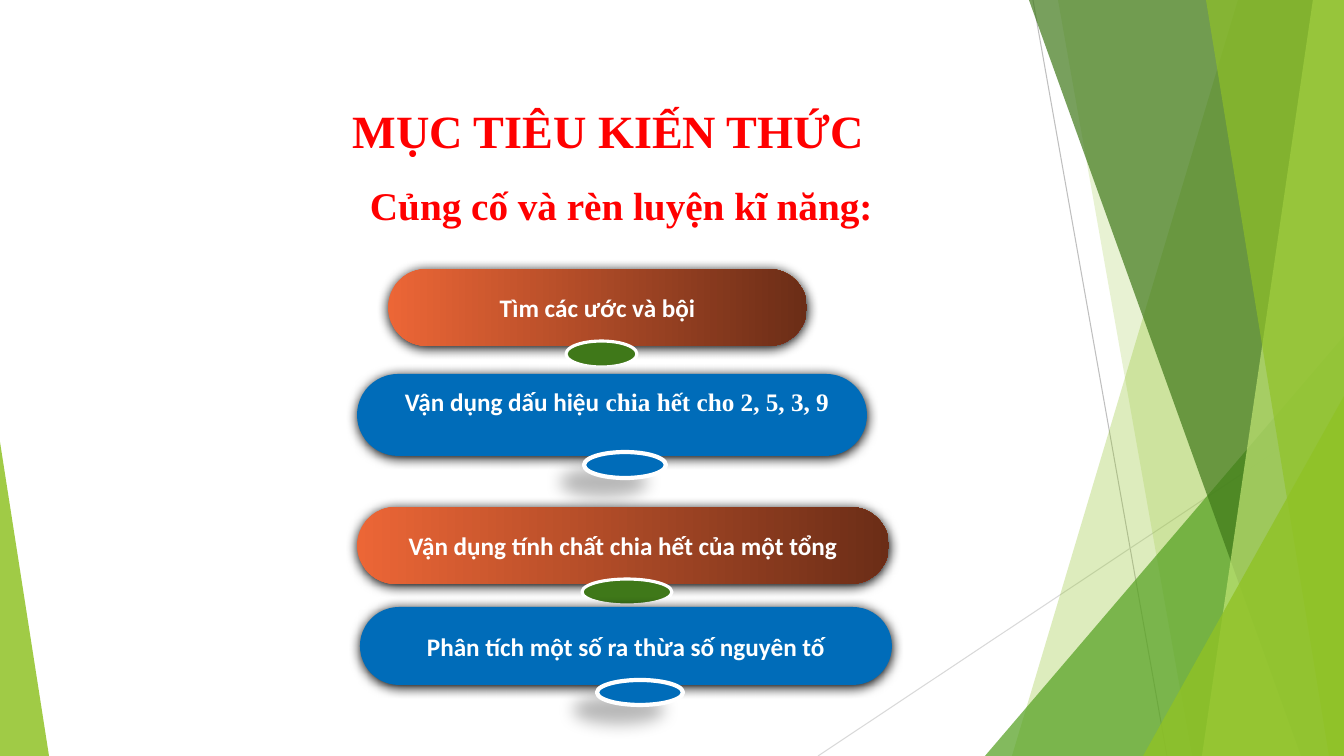
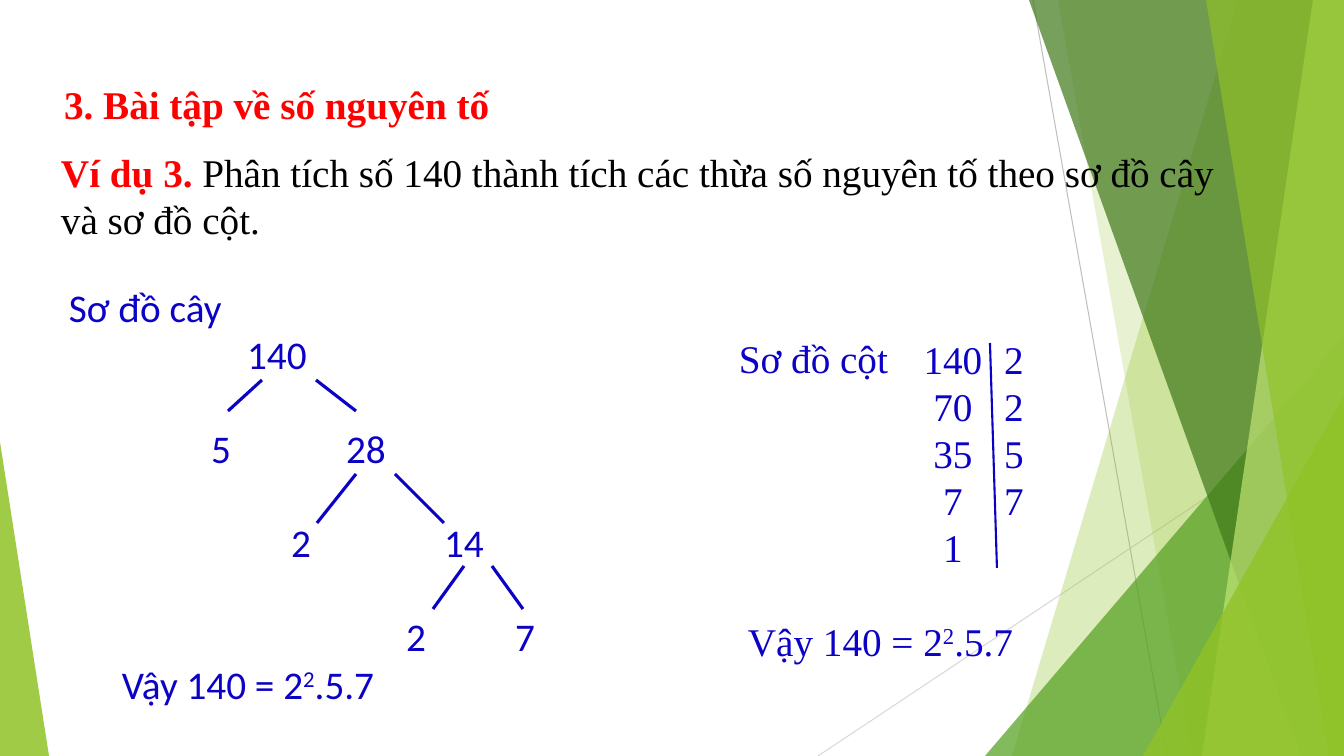
from lxml import etree
from pptx import Presentation
from pptx.dml.color import RGBColor
from pptx.enum.shapes import MSO_CONNECTOR, MSO_SHAPE
from pptx.enum.text import MSO_ANCHOR, PP_ALIGN
from pptx.oxml.ns import qn
from pptx.util import Emu, Pt

LEFT, MID = PP_ALIGN.LEFT, PP_ALIGN.CENTER
CENTER = MSO_ANCHOR.MIDDLE
PILL, OVAL, TRI = MSO_SHAPE.ROUNDED_RECTANGLE, MSO_SHAPE.OVAL, MSO_SHAPE.ISOSCELES_TRIANGLE
STRAIGHT = MSO_CONNECTOR.STRAIGHT

SCALE = 914400 / 100.8
WIDE, HIGH = 1344, 756
SERIF, SANS = "Times New Roman", "Calibri"

HEX = {
    "red": "FF0000", "ink": "0B02C6", "black": "000000", "white": "FFFFFF",
    "blue": "006CB9", "orange": "EC6636", "brown": "6B2D17", "forest": "3F7819",
    "green": "54A021", "lime": "90C226", "pale": "C0E474",
    "gray": "BFBFBF", "silver": "D9D9D9",
}

# Text styles: colour and font values
STYLES = {
    "title": ("red", {"name": SERIF, "size": Pt(33), "bold": True}),
    "head": ("red", {"name": SERIF, "size": Pt(28), "bold": True}),
    "body": ("black", {"name": SERIF, "size": Pt(28), "bold": False}),
    "tree": ("ink", {"name": SANS, "size": Pt(28), "bold": False}),
    "column": ("ink", {"name": SERIF, "size": Pt(28), "bold": False}),
    "pill": ("white", {"name": SANS, "size": Pt(18), "bold": True}),
    "serif": ("white", {"name": SERIF, "size": Pt(18), "bold": True}),
}

# Shared decoration
RULES = [((1033, 0), (1167, 756), "gray"), ((1344, 406), (818, 756), "silver")]
# Two numbers: left edge of a band at top and bottom; four: box of a triangle
FACETS = [
    ((1238, 1012), "lime", 30),
    ((1058, 1192), "lime", 20),
    ((985, 336, 359, 420), "green", 72),
    ((1029, 1301), "forest", 70),
    ((1313, 1202), "pale", 70),
    ((1206, 1329), "lime", 65),
    ((1143, 396, 201, 360), "lime", 80),
    ((0, 442, 49, 314), "lime", 85),
]

# Goals: pill box, runs, knob box
GOALS = [
    ((388, 269, 419, 77), [("Tìm các ước và bội", "pill")], (566, 341, 71, 26)),
    ((357, 374, 510, 82),
     [("Vận dụng dấu hiệu", "pill"), (" chia hết cho 2, 5, 3, 9", "serif")],
     (584, 452, 82, 26)),
    ((357, 507, 532, 77),
     [("Vận dụng tính chất chia hết của một tổng", "pill")], (582, 579, 90, 26)),
    ((360, 607, 532, 78),
     [("Phân tích một số ra thừa số nguyên tố", "pill")], (597, 680, 86, 25)),
]
RAISED = 1  # the goal whose text sits above the middle
# Shadows: opacity, blur, distance, direction
GLOW, DROP = (100, 8.5, 1, 90), (28, 11.8, 19.7, 141)

# Factor tree: centre, level, number
NODES = [(277, 0, "140"), (221, 1, "5"), (366, 1, "28"), (301, 2, "2"),
         (464, 2, "14"), (416, 3, "2"), (525, 3, "7")]
ROOT, STEP = 354, 94
BRANCHES = [
    ((262, 380), (228, 411)), ((316, 380), (356, 411)),
    ((356, 474), (317, 523)), ((395, 474), (444, 523)),
    ((464, 566), (433, 609)), ((492, 566), (523, 609)),
]

# Division column: centre, numbers
COLUMNS = [(953, ["140", "70", "35", "7", "1"]), (1014, ["2", "2", "5", "7"])]
TOP, PITCH = 335, 47
DIVIDER = ((990, 343), (997, 568))


def px(num):
    return Emu(round(num * SCALE))


def rgb(name):
    return RGBColor.from_string(HEX[name])


def fill_text(shape, paras, align=LEFT, pitch=None):
    frame = shape.text_frame
    frame.word_wrap = True
    frame.vertical_anchor = CENTER
    for side in ("left", "top", "right", "bottom"):
        setattr(frame, "margin_" + side, 0)
    for i, runs in enumerate(paras):
        para = frame.add_paragraph() if i else frame.paragraphs[0]
        para.alignment = align
        if pitch:
            para.line_spacing = Pt(round(pitch / 1.4, 2))
        for words, style, *raised in runs:
            run = para.add_run()
            run.text = words
            color, values = STYLES[style]
            for key, val in values.items():
                setattr(run.font, key, val)
            run.font.color.rgb = rgb(color)
            if raised:
                run._r.get_or_add_rPr().set("baseline", "30000")
    return frame


def add_text(slide, box, paras, align=LEFT, pitch=None):
    shape = slide.shapes.add_textbox(*map(px, box))
    fill_text(shape, paras, align, pitch)


def add_line(slide, start, end, color, width):
    line = slide.shapes.add_connector(STRAIGHT, *map(px, start + end))
    line.line.color.rgb = rgb(color)
    line.line.width = Pt(width)
    etree.SubElement(line._element.spPr, qn("a:effectLst"))


def paint(shape, color, alpha=100):
    shape.shadow.inherit = False
    shape.fill.solid()
    shape.fill.fore_color.rgb = rgb(color)
    shape.line.fill.background()
    if alpha < 100:
        tone = shape._element.spPr.find(qn("a:solidFill"))[0]
        etree.SubElement(tone, qn("a:alpha"), val=str(alpha * 1000))


def add_shadow(shape, alpha, blur, dist, angle):
    effects = shape._element.spPr.find(qn("a:effectLst"))
    outer = etree.SubElement(
        effects, qn("a:outerShdw"), blurRad=str(Pt(blur)), dist=str(Pt(dist)),
        dir=str(angle * 60000), algn="ctr", rotWithShape="0")
    tone = etree.SubElement(outer, qn("a:srgbClr"), val=HEX["black"])
    etree.SubElement(tone, qn("a:alpha"), val=str(alpha * 1000))


def add_slide(deck):
    slide = deck.slides.add_slide(deck.slide_layouts[6])
    for start, end, color in RULES:
        add_line(slide, start, end, color, 0.75)
    for place, color, alpha in FACETS:
        if len(place) == 2:
            top, foot = place
            form = slide.shapes.build_freeform(top, 0, scale=SCALE)
            form.add_line_segments([(WIDE, 0), (WIDE, HIGH), (foot, HIGH)])
            shape = form.convert_to_shape()
        else:
            shape = slide.shapes.add_shape(TRI, *map(px, place))
            shape.adjustments[0] = 1 if place[0] else 0
        paint(shape, color, alpha)
    return slide


def add_goals(slide):
    add_text(slide, (301, 97, 615, 67), [[("MỤC TIÊU KIẾN THỨC", "title")]], MID)
    add_text(slide, (370, 176, 520, 58), [[("Củng cố và rèn luyện kĩ năng:", "head")]])
    for i, (box, runs, knob) in enumerate(GOALS):
        warm = i % 2 == 0
        pill = slide.shapes.add_shape(PILL, *map(px, box))
        pill.adjustments[0] = 0.5
        paint(pill, "blue")
        if warm:
            pill.fill.gradient()
            pill.fill.gradient_angle = 0
            for stop, color in zip(pill.fill.gradient_stops, ("orange", "brown")):
                stop.color.rgb = rgb(color)
        add_shadow(pill, *GLOW)
        frame = fill_text(pill, [runs], MID)
        if i == RAISED:
            frame.margin_left, frame.margin_bottom = px(10), px(27)

        oval = slide.shapes.add_shape(OVAL, *map(px, knob))
        paint(oval, "forest" if warm else "blue")
        oval.line.color.rgb = rgb("white")
        oval.line.width = Pt(2.25 if warm else 3)
        if not warm:
            add_shadow(oval, *DROP)


def add_factors(slide):
    add_text(slide, (64, 75, 453, 58), [[("3. Bài tập về số nguyên tố", "head")]])
    add_text(slide, (61, 148, 1182, 95), [[
        ("Ví dụ 3. ", "head"),
        ("Phân tích số 140 thành tích các thừa số nguyên tố theo sơ đồ cây"
         " và sơ đồ cột.", "body")]], pitch=PITCH)

    # Headings and results of both methods
    for style, name, head, result in (
            ("tree", "Sơ đồ cây", (69, 283), (122, 660)),
            ("column", "Sơ đồ cột", (739, 334), (748, 617))):
        add_text(slide, (*head, 170, 48), [[(name, style)]])
        add_text(slide, (*result, 320, 48), [[
            ("Vậy 140 = 2", style), ("2", style, True), (".5.7", style)]])

    # Tree
    for x, level, num in NODES:
        add_text(slide, (x - 40, ROOT + level * STEP - 24, 80, 48),
                 [[(num, "tree")]], MID)
    for start, end in BRANCHES:
        add_line(slide, start, end, "ink", 2.25)

    # Column
    for x, nums in COLUMNS:
        add_text(slide, (x - 35, TOP, 70, PITCH * len(nums)),
                 [[(num, "column")] for num in nums], MID, PITCH)
    add_line(slide, *DIVIDER, "ink", 1.5)


def main():
    deck = Presentation()
    deck.slide_width, deck.slide_height = px(WIDE), px(HIGH)
    add_goals(add_slide(deck))
    add_factors(add_slide(deck))
    deck.save("out.pptx")


if __name__ == "__main__":
    main()
